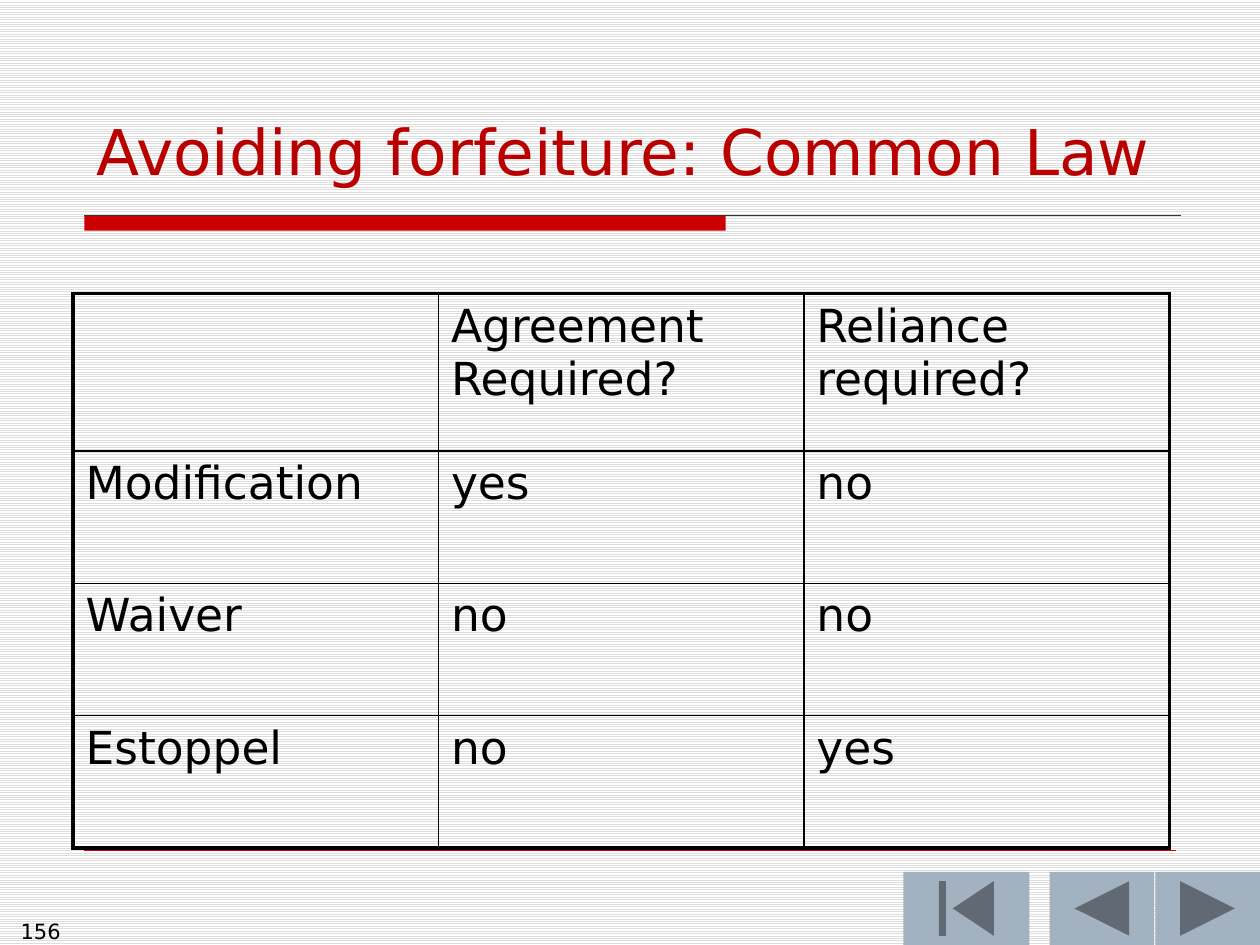
import lxml.etree
import pptx
import pptx.dml.color
import pptx.enum.dml
import pptx.enum.shapes
import pptx.enum.text
import pptx.oxml
import pptx.oxml.ns
import pptx.util

Inches = pptx.util.Inches
RGBColor = pptx.dml.color.RGBColor
SHAPE = pptx.enum.shapes.MSO_SHAPE
ALIGN = pptx.enum.text.PP_ALIGN
ANCHOR = pptx.enum.text.MSO_ANCHOR
qn = pptx.oxml.ns.qn

BLACK = RGBColor(0x00, 0x00, 0x00)
WHITE = RGBColor(0xFF, 0xFF, 0xFF)
STRIPE = RGBColor(0xDD, 0xDD, 0xDD)
RED = RGBColor(0xCC, 0x00, 0x00)
TITLE = RGBColor(0xB9, 0x00, 0x00)
RULE = RGBColor(0x33, 0x33, 0x33)
BUTTON = RGBColor(0xA3, 0xB2, 0xC1)


def write(frame, text, size=26, color=BLACK, align=ALIGN.LEFT):
    para = frame.paragraphs[0]
    para.alignment = align
    run = para.add_run()
    run.text = text
    run.font.name = "DejaVu Sans"
    run.font.size = pptx.util.Pt(size)
    run.font.color.rgb = color


def border(cell, side, width):
    """Draw one black cell edge; side is L, R, T or B, in that order."""
    line = lxml.etree.SubElement(cell._tc.get_or_add_tcPr(), qn(f"a:ln{side}"))
    line.set("w", str(pptx.util.Pt(width)))
    fill = lxml.etree.SubElement(line, qn("a:solidFill"))
    lxml.etree.SubElement(fill, qn("a:srgbClr")).set("val", str(BLACK))


deck = pptx.Presentation()
deck.slide_width = Inches(10)
deck.slide_height = Inches(7.5)
slide = deck.slides.add_slide(deck.slide_layouts[6])
shapes = slide.shapes

back = slide.background.fill
back.patterned()
back.pattern = pptx.enum.dml.MSO_PATTERN.LIGHT_HORIZONTAL
back.fore_color.rgb = STRIPE
back.back_color.rgb = WHITE

# Title bar, navigation buttons and rules
blocks = [
    (SHAPE.RECTANGLE, 0.67, 1.71, 5.09, 0.12, RED),
    (SHAPE.ACTION_BUTTON_BACK_OR_PREVIOUS, 8.33, 6.92, 0.83, 0.58, BUTTON),
    (SHAPE.ACTION_BUTTON_BEGINNING, 7.17, 6.92, 1, 0.58, BUTTON),
    (SHAPE.ACTION_BUTTON_FORWARD_OR_NEXT, 9.17, 6.92, 0.83, 0.58, BUTTON),
]
for kind, left, top, width, height, color in blocks:
    block = shapes.add_shape(kind, Inches(left), Inches(top), Inches(width), Inches(height))
    block.shadow.inherit = False
    block.fill.solid()
    block.fill.fore_color.rgb = color
    block.line.fill.background()

for right, top, color, weight in [(9.37, 1.71, RULE, 0.75), (9.33, 6.75, RED, 0.25)]:
    rule = shapes.add_connector(
        pptx.enum.shapes.MSO_CONNECTOR.STRAIGHT,
        Inches(0.67), Inches(top), Inches(right), Inches(top))
    rule.line.color.rgb = color
    rule.line.width = pptx.util.Pt(weight)
    lxml.etree.SubElement(rule._element.spPr, qn("a:effectLst"))

# Page number and title
page = shapes.add_textbox(Inches(0), Inches(7.24), Inches(0.58), Inches(0.26)).text_frame
page.word_wrap = True
write(page, "156", size=12, align=ALIGN.RIGHT)

title = shapes.add_textbox(Inches(0.67), Inches(0.83), Inches(8.92), Inches(0.71)).text_frame
title.word_wrap = True
title.vertical_anchor = ANCHOR.BOTTOM
write(title, "Avoiding forfeiture: Common Law", size=36, color=TITLE)

# Table: thick frame, thin inner lines
rows = [
    ("", "Agreement Required?", "Reliance required?"),
    ("Modification", "yes", "no"),
    ("Waiver", "no", "no"),
    ("Estoppel", "no", "yes"),
]
table = shapes.add_table(
    len(rows), 3, Inches(0.58), Inches(2.33), Inches(8.71), Inches(4.4)).table
table.first_row = False
table.horz_banding = False
for col in table.columns:
    col.width = Inches(2.9)
for r, words in enumerate(rows):
    table.rows[r].height = Inches(1.05 if r else 1.25)
    for c, word in enumerate(words):
        cell = table.cell(r, c)
        outer = {"L": c == 0, "R": c == 2, "T": r == 0, "B": r == len(rows) - 1}
        for side, thick in outer.items():
            border(cell, side, 2.25 if thick else 1)
        cell.fill.background()
        if word:
            write(cell.text_frame, word)

deck.save("out.pptx")
